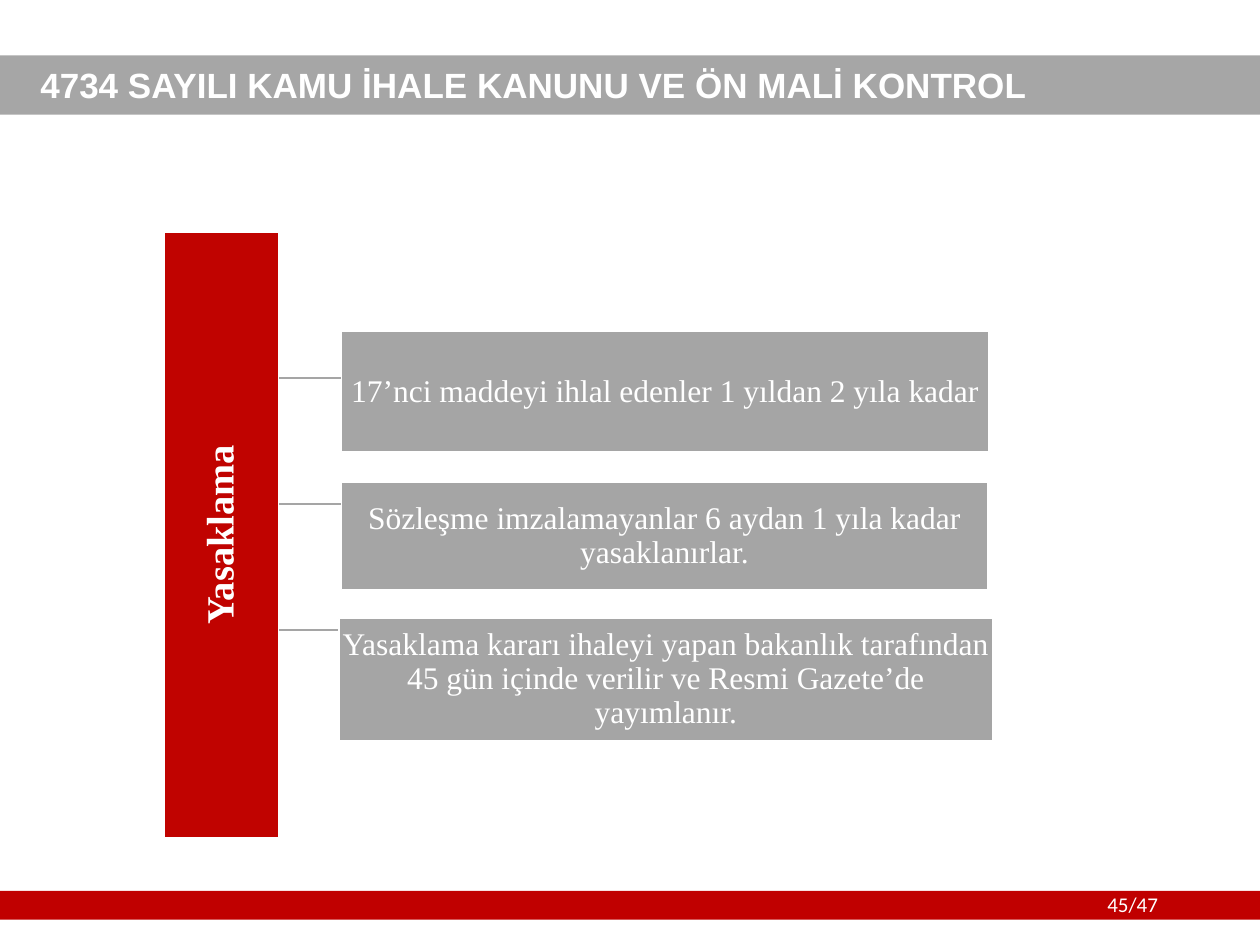
from pptx import Presentation
from pptx.dml.color import RGBColor
from pptx.enum.shapes import MSO_SHAPE as SHAPE
from pptx.enum.text import MSO_ANCHOR as ANCHOR, MSO_AUTO_SIZE as AUTO, PP_ALIGN as ALIGN
from pptx.util import Inches, Pt

W, H = 10, 7.5
COLORS = {"red": "C00000", "root": "C00300", "band": "A6A6A6", "box": "A5A5A5", "white": "FFFFFF"}
TITLE = "4734 SAYILI KAMU İHALE KANUNU VE ÖN MALİ KONTROL"
PAGE = "45/47"
BANDS = [(7.07, 0.23, "red"), (0.44, 0.47, "band")]
ROOT = ("Yasaklama", (-0.65, 3.79, 4.81, 0.91))
BRANCHES = [
    ("17’nci maddeyi ihlal edenler 1 yıldan 2 yıla kadar", (2.71, 2.63, 5.14, 0.96)),
    ("Sözleşme imzalamayanlar 6 aydan 1 yıla kadar yasaklanırlar.", (2.71, 3.83, 5.13, 0.85)),
    ("Yasaklama kararı ihaleyi yapan bakanlık tarafından 45 gün içinde verilir ve "
     "Resmi Gazete’de yayımlanır.", (2.69, 4.91, 5.19, 0.97)),
]
FONTS = {
    "title": {"name": "Arial", "size": Pt(20), "bold": True},
    "page": {"name": "Calibri", "size": Pt(12)},
    "root": {"name": "Times New Roman", "size": Pt(22), "bold": True},
    "branch": {"name": "Times New Roman", "size": Pt(18), "bold": False},
}


def rgb(key):
    return RGBColor.from_string(COLORS[key])


def write(sp, text, style, align, spacing=0.9, anchor=ANCHOR.MIDDLE, inset=None):
    tf = sp.text_frame
    tf.text = text
    frame = {"word_wrap": True, "auto_size": AUTO.NONE, "vertical_anchor": anchor}
    if inset is not None:
        frame.update({f"margin_{side}": Inches(inset) for side in ("left", "top", "right", "bottom")})
    for key, value in frame.items():
        setattr(tf, key, value)
    p = tf.paragraphs[0]
    p.alignment, p.line_spacing = align, spacing
    font = p.runs[0].font
    for key, value in FONTS[style].items():
        setattr(font, key, value)
    font.color.rgb = rgb("white")


def add_rect(s, box, fill, outlined=False):
    sp = s.shapes.add_shape(SHAPE.RECTANGLE, *map(Inches, box))
    sp.shadow.inherit = False
    sp.fill.solid()
    sp.fill.fore_color.rgb = rgb(fill)
    if outlined:
        sp.line.color.rgb = rgb("white")
        sp.line.width = Pt(1)
    else:
        sp.line.fill.background()
    return sp


def add_elbow(s, start, end):
    (x1, y1), (x2, y2) = start, end
    mid = (x1 + x2) / 2
    fb = s.shapes.build_freeform(x1, y1, scale=Inches(1))
    fb.add_line_segments([(mid, y1), (mid, y2), (x2, y2)], close=False)
    sp = fb.convert_to_shape()
    sp.shadow.inherit = False
    sp.fill.background()
    sp.line.color.rgb = rgb("box")
    sp.line.width = Pt(1)


def main():
    prs = Presentation()
    prs.slide_width, prs.slide_height = Inches(W), Inches(H)
    s = prs.slides.add_slide(prs.slide_layouts[5])

    for top, height, fill in BANDS:
        add_rect(s, (0, top, W, height), fill)

    title = s.shapes.title
    title.left, title.top, title.width, title.height = map(Inches, (0.22, 0.46, 9.05, 0.47))
    write(title, TITLE, "title", ALIGN.LEFT)
    s.shapes._spTree.append(title._element)

    page = s.shapes.add_textbox(*map(Inches, (8.69, 7.03, 0.93, 0.3)))
    write(page, PAGE, "page", ALIGN.LEFT, 1.0, ANCHOR.TOP)

    name, (x, y, w, h) = ROOT
    start = (x + w / 2 + h / 2, y + h / 2)
    for _, (bx, by, _, bh) in reversed(BRANCHES):
        add_elbow(s, start, (bx, by + bh / 2))

    root = add_rect(s, (x, y, w, h), "root", True)
    root.rotation = 270
    write(root, name, "root", ALIGN.CENTER, inset=0.02)
    for text, box in BRANCHES:
        write(add_rect(s, box, "box", True), text, "branch", ALIGN.CENTER, inset=0.01)

    prs.save("out.pptx")


if __name__ == "__main__":
    main()
